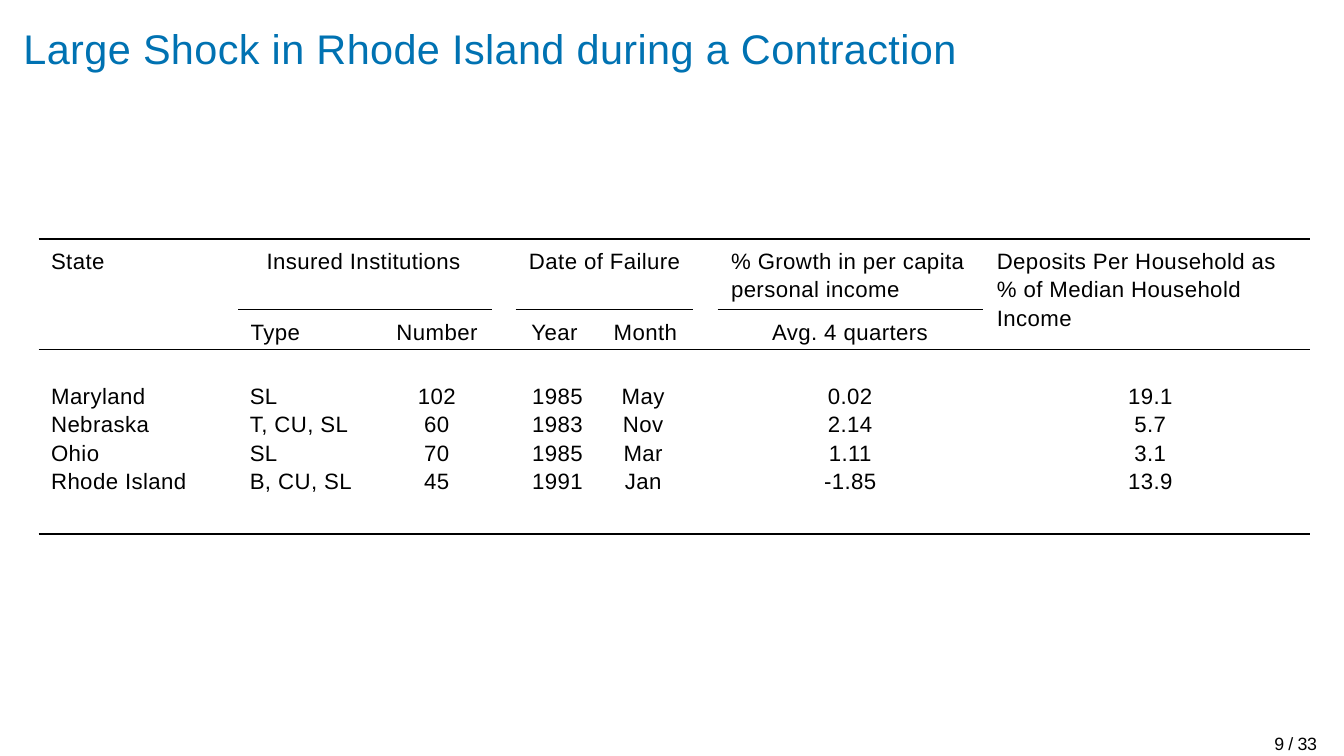
import pptx
import pptx.util
import pptx.dml.color
import pptx.enum.text
import pptx.enum.shapes
import pptx.oxml

Cm = pptx.util.Cm
Pt = pptx.util.Pt
ALIGN = pptx.enum.text.PP_ALIGN
BLACK, BLUE = "000000", "0072B2"

TITLE = "Large Shock in Rhode Island during a Contraction"
PAGE = "9 / 33"

# Header rows: top, then (left, width, text)
HEADS = [
    (2.93, [
        (0.61, 1, "State"),
        (3.18, 2.6, "Insured Institutions"),
        (6.31, 2.1, "Date of Failure"),
        (8.72, 3, "% Growth in per capita personal income"),
        (11.89, 3.5, "Deposits Per Household as % of Median Household Income"),
    ]),
    (3.78, [
        (2.99, 1, "Type"),
        (4.73, 1.2, "Number"),
        (6.34, 0.8, "Year"),
        (7.32, 1, "Month"),
        (9.21, 2.2, "Avg. 4 quarters"),
    ]),
]

# Rules: left, right, height on the slide, weight
RULES = [
    (0.46, 15.62, 2.85, 0.63),
    (2.84, 5.87, 3.69, 0.25),
    (6.15, 8.26, 3.69, 0.25),
    (8.56, 11.73, 3.69, 0.25),
    (0.46, 15.62, 4.17, 0.39),
    (0.46, 15.62, 6.37, 0.63),
]

STATES = [
    ("Maryland", "SL", "102", "1985", "May", "0.02", "19.1"),
    ("Nebraska", "T, CU, SL", "60", "1983", "Nov", "2.14", "5.7"),
    ("Ohio", "SL", "70", "1985", "Mar", "1.11", "3.1"),
    ("Rhode Island", "B, CU, SL", "45", "1991", "Jan", "-1.85", "13.9"),
]
LEFT, TOP, ROW = 0.53, 4.57, 0.34
# Columns: width, left edge of the text or None, centre of the text or None
COLS = [
    (2.08, 0.61, None),
    (1.98, 2.98, None),
    (1.3, None, 5.21),
    (1.3, None, 6.65),
    (1.7, None, 7.67),
    (3.05, None, 10.14),
    (2.11, None, 13.72),
]


def rgb(code):
    return pptx.dml.color.RGBColor.from_string(code)


def write(frame, text, size, color=BLACK, pitch=None, gap=0.1):
    """Fill a text frame; pitch is the line distance, gap the letter spacing."""
    para = frame.paragraphs[0]
    para.text = text
    para.alignment = ALIGN.LEFT
    para.font.name = "Arial"
    para.font.size = Pt(size)
    para.font.color.rgb = rgb(color)
    if pitch:
        para.line_spacing = Pt(pitch)
    for run in para.runs:
        run._r.get_or_add_rPr().set("spc", str(round(gap * 100)))
    return para


def bare(frame):
    """Take away insets and automatic sizing."""
    frame.margin_left = frame.margin_right = 0
    frame.margin_top = frame.margin_bottom = 0
    frame.word_wrap = True
    frame.auto_size = pptx.enum.text.MSO_AUTO_SIZE.NONE
    frame.vertical_anchor = pptx.enum.text.MSO_ANCHOR.TOP


def label(slide, x, y, wide, high, text, size, **look):
    box = slide.shapes.add_textbox(Cm(x), Cm(y), Cm(wide), Cm(high))
    bare(box.text_frame)
    write(box.text_frame, text, size, **look)


def rule(slide, x, end, y, weight):
    line = slide.shapes.add_connector(
        pptx.enum.shapes.MSO_CONNECTOR.STRAIGHT, Cm(x), Cm(y), Cm(end), Cm(y))
    line.line.color.rgb = rgb(BLACK)
    line.line.width = Pt(weight)
    line._element.spPr.append(pptx.oxml.parse_xml(
        '<a:effectLst xmlns:a='
        '"http://schemas.openxmlformats.org/drawingml/2006/main"/>'))


def grid(slide):
    total = sum(col[0] for col in COLS)
    table = slide.shapes.add_table(
        len(STATES), len(COLS), Cm(LEFT), Cm(TOP),
        Cm(total), Cm(ROW * len(STATES))).table
    table.first_row = table.horz_banding = False
    for row in table.rows:
        row.height = Cm(ROW)
    x = LEFT
    for c, (wide, edge, mid) in enumerate(COLS):
        table.columns[c].width = Cm(wide)
        # Uneven margins move the centre of the text within its column
        shift = edge - x if mid is None else 2 * mid - 2 * x - wide
        for r, state in enumerate(STATES):
            cell = table.cell(r, c)
            cell.fill.background()
            cell.margin_top = cell.margin_bottom = 0
            cell.margin_left = Cm(max(shift, 0))
            cell.margin_right = Cm(max(-shift, 0))
            para = write(cell.text_frame, state[c], 7.5, pitch=8.7)
            if mid is not None:
                para.alignment = ALIGN.CENTER
        x += wide


def main():
    deck = pptx.Presentation()
    deck.slide_width, deck.slide_height = Cm(16.03), Cm(9.02)
    slide = deck.slides.add_slide(deck.slide_layouts[5])
    title = slide.shapes.title
    title.left, title.top = Cm(0.28), Cm(0.28)
    title.width, title.height = Cm(12), Cm(0.6)
    bare(title.text_frame)
    write(title.text_frame, TITLE, 14, BLUE)
    for y, heads in HEADS:
        for x, wide, text in heads:
            label(slide, x, y, wide, 0.4, text, 7.5, pitch=9.6)
    for item in RULES:
        rule(slide, *item)
    grid(slide)
    label(slide, 15.2, 8.74, 0.8, 0.25, PAGE, 6, gap=-0.1)
    deck.save("out.pptx")


if __name__ == "__main__":
    main()
